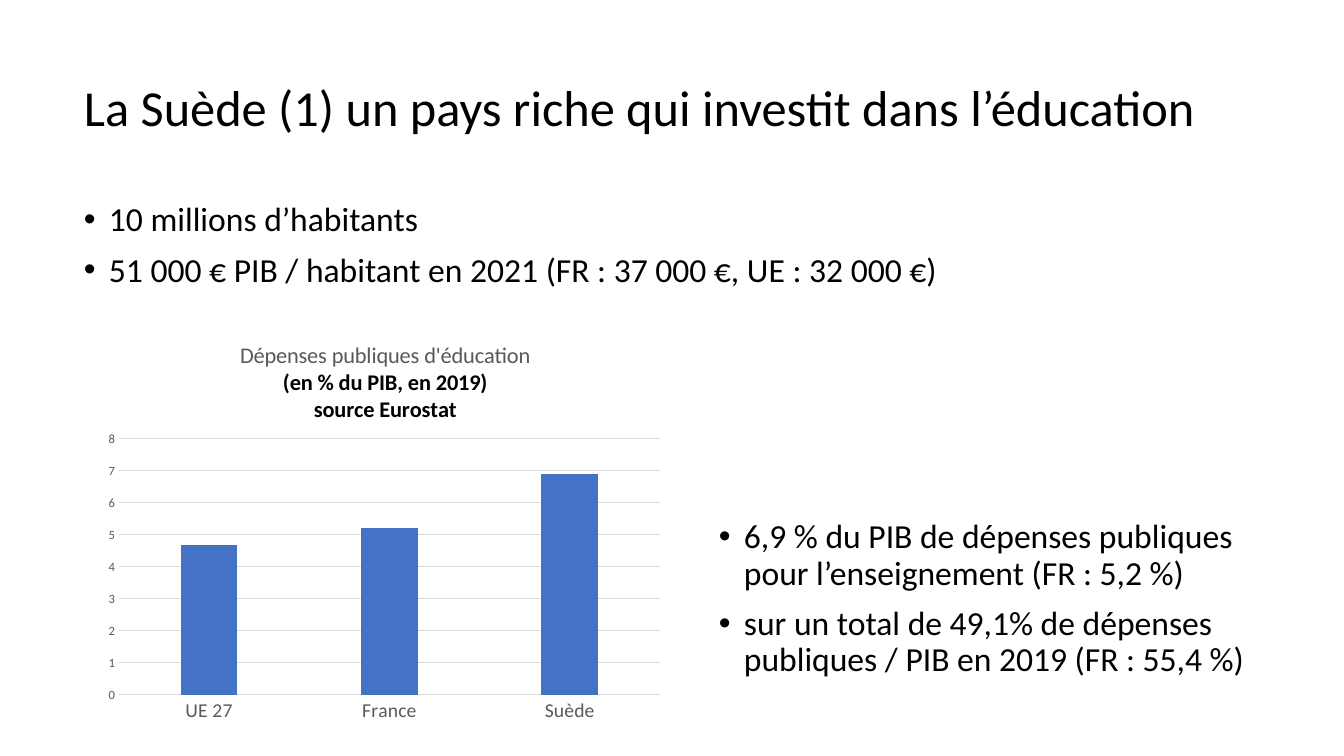
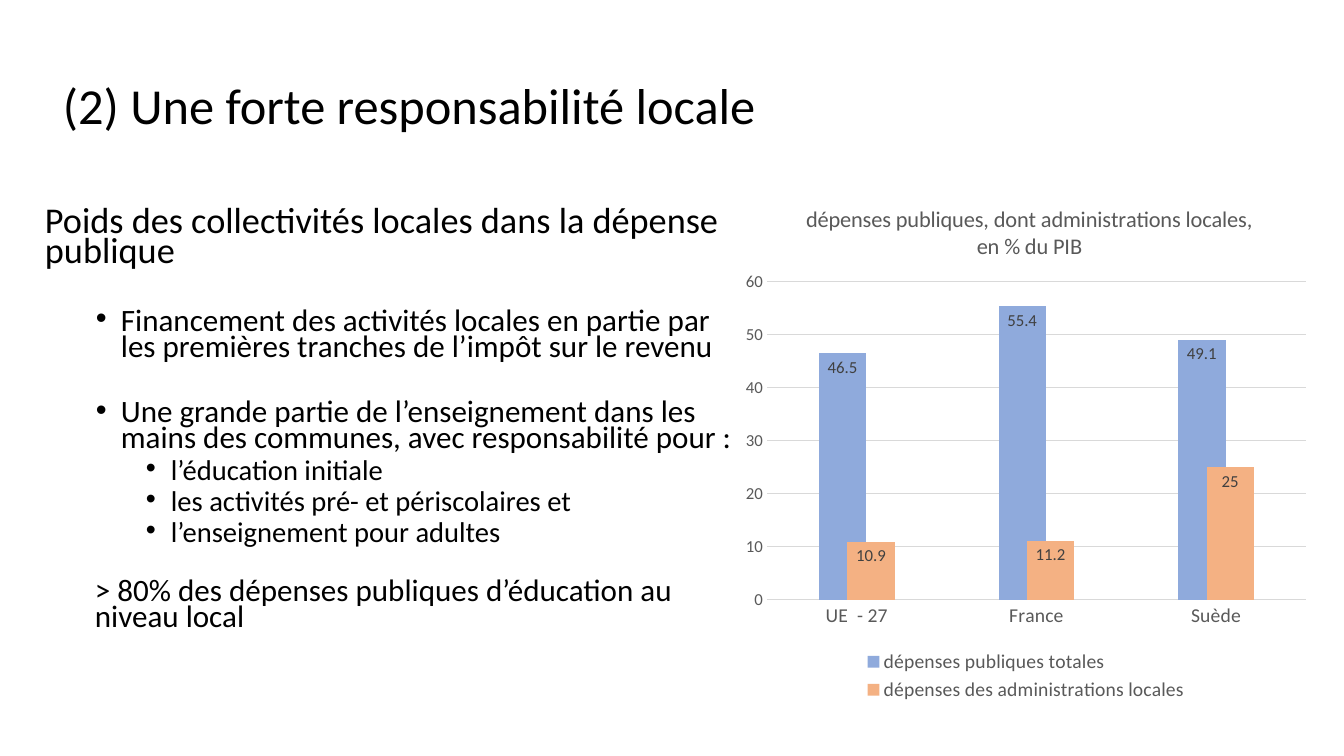
"""Two slides on public education spending in Sweden."""
from lxml import etree
from pptx import Presentation
from pptx import util as u
from pptx.chart.data import CategoryChartData
from pptx.dml.color import RGBColor
from pptx.enum import chart as kind, text
from pptx.oxml.ns import qn

PX = 914400 / 100.8
FONT = "Calibri"
BLACK = RGBColor(0, 0, 0)
GREY = RGBColor(0x59, 0x59, 0x59)
DARK = RGBColor(0x40, 0x40, 0x40)
PALE = RGBColor(0xD9, 0xD9, 0xD9)
BLUE = RGBColor(0x44, 0x72, 0xC4)
SKY = RGBColor(0x8F, 0xAA, 0xDC)
PEACH = RGBColor(0xF4, 0xB1, 0x83)


def write(frame, words, size=24, color=BLACK, bold=False, line=None, before=None,
          left=0, level=0, bullet=False):
    """Add one formatted paragraph to a text frame."""
    par = frame.add_paragraph() if frame.text else frame.paragraphs[0]
    run = par.add_run()
    run.text = words
    font = run.font
    font.name, font.size, font.bold = FONT, u.Pt(size), bold
    font.color.rgb = color
    par.level = level
    if line:
        par.line_spacing = line
    if before:
        par.space_before = u.Pt(before)
    props = par._p.get_or_add_pPr()
    if left:
        props.set("marL", str(round(left * PX)))
    if bullet:
        props.set("indent", str(round(-25 * PX)))
        etree.SubElement(props, qn("a:buFont")).set("typeface", "Arial")
        etree.SubElement(props, qn("a:buChar")).set("char", "•")


def place(part, index, **spots):
    """Fix the position of a chart part, as fractions of the chart."""
    for old in part.findall(qn("c:layout")):
        part.remove(old)
    outer = etree.Element(qn("c:layout"))
    part.insert(index, outer)
    inner = etree.SubElement(outer, qn("c:manualLayout"))
    if "w" in spots:
        etree.SubElement(inner, qn("c:layoutTarget")).set("val", "inner")
    for key in "xy":
        etree.SubElement(inner, qn(f"c:{key}Mode")).set("val", "edge")
    for key, spot in spots.items():
        etree.SubElement(inner, qn(f"c:{key}")).set("val", f"{spot:.4f}")


ITEM = dict(line=0.9, before=10, left=25, bullet=True)
HEAD = dict(size=25.9, line=0.7, before=10)
POINT = dict(size=22.2, line=0.7, left=76, level=1, bullet=True)
SUB = dict(size=20.4, line=0.7, before=5, left=126, level=2, bullet=True)
NOTE = dict(size=22.2, line=0.7, before=24, left=50, level=1)

PAGES = [
    dict(
        title="La Suède (1) un pays riche qui investit dans l’éducation",
        spot=(74, 37),
        bodies=[
            ((74, 198, 1234, 170), [
                ("10 millions d’habitants", ITEM),
                ("51 000 € PIB / habitant en 2021 (FR : 37 000 €, UE : 32 000 €)", ITEM),
            ]),
            ((709, 515, 598, 230), [
                ("6,9 % du PIB de dépenses publiques pour l’enseignement (FR : 5,2 %)", ITEM),
                ("sur un total de 49,1% de dépenses publiques / PIB en 2019 (FR : 55,4 %)", ITEM),
            ]),
        ],
        box=(98, 318, 575, 414),
        plot=(119, 439, 541, 256),
        head=(237, 337),
        lines=[
            ("Dépenses publiques d'éducation", dict(color=GREY)),
            ("(en % du PIB, en 2019)", dict(bold=True)),
            ("source Eurostat", dict(bold=True)),
        ],
        cats=["UE 27", "France", "Suède"],
        series=[("Series 1", (4.7, 5.2, 6.9), BLUE)],
        top=8, step=1, tick=9, overlap=-27, detail=False,
    ),
    dict(
        title="(2) Une forte responsabilité locale",
        spot=(53, 35),
        bodies=[
            ((35, 204, 717, 480), [
                ("Poids des collectivités locales dans la dépense publique", HEAD),
                ("Financement des activités locales en partie par les premières "
                 "tranches de l’impôt sur le revenu", dict(POINT, before=29)),
                ("Une grande partie de l’enseignement dans les mains des communes, "
                 "avec responsabilité pour :", dict(POINT, before=28)),
                ("l’éducation initiale", SUB),
                ("les activités pré- et périscolaires et", SUB),
                ("l’enseignement pour adultes", SUB),
                ("> 80% des dépenses publiques d’éducation au niveau local", NOTE),
            ]),
        ],
        box=(734, 181, 584, 525),
        plot=(767, 282, 539, 318),
        head=(803, 201),
        lines=[
            ("dépenses publiques, dont administrations locales,", dict(color=GREY)),
            ("en % du PIB", dict(color=GREY)),
        ],
        cats=["UE  - 27", "France", "Suède"],
        series=[
            ("dépenses publiques totales", (46.5, 55.4, 49.1), SKY),
            ("dépenses des administrations locales", (10.9, 11.2, 25), PEACH),
        ],
        top=60, step=10, tick=12, overlap=40, detail=True,
    ),
]

deck = Presentation()
deck.slide_width, deck.slide_height = round(1344 * PX), round(756 * PX)

for page in PAGES:
    slide = deck.slides.add_slide(deck.slide_layouts[6])
    title = ((*page["spot"], 1159, 146), [(page["title"], dict(size=36, line=0.9))])
    for box, paras in [title, *page["bodies"]]:
        frame = slide.shapes.add_textbox(*(round(n * PX) for n in box)).text_frame
        frame.word_wrap = True
        if paras is title[1]:
            frame.vertical_anchor = text.MSO_ANCHOR.MIDDLE
        for words, style in paras:
            write(frame, words, **style)

    data = CategoryChartData()
    data.categories = page["cats"]
    for name, vals, _ in page["series"]:
        data.add_series(name, vals)
    box = page["box"]
    chart = slide.shapes.add_chart(
        kind.XL_CHART_TYPE.COLUMN_CLUSTERED, *(round(n * PX) for n in box), data).chart
    chart.font.name, chart.font.size = FONT, u.Pt(10)
    chart.font.color.rgb = BLACK

    chart.has_title = True
    frame = chart.chart_title.text_frame
    for words, style in page["lines"]:
        write(frame, words, size=16, **style)
    x, y, w, h = box
    left, top = page["head"]
    place(chart.chart_title._element, 1, x=(left - x) / w, y=(top - y) / h)
    left, top, wide, high = page["plot"]
    place(chart._chartSpace.chart.plotArea, 0,
          x=(left - x) / w, y=(top - y) / h, w=wide / w, h=high / h)

    plot = chart.plots[0]
    plot.vary_by_categories = False
    plot.gap_width, plot.overlap = 219, page["overlap"]
    for bars, (_, _, color) in zip(plot.series, page["series"]):
        bars.format.fill.solid()
        bars.format.fill.fore_color.rgb = color
        bars.invert_if_negative = False

    cat, val = chart.category_axis, chart.value_axis
    fonts = [(cat.tick_labels.font, 14, GREY), (val.tick_labels.font, page["tick"], GREY)]
    for axis in (cat, val):
        axis.major_tick_mark = axis.minor_tick_mark = kind.XL_TICK_MARK.NONE
    val.minimum_scale, val.maximum_scale = 0, page["top"]
    val.major_unit = page["step"]
    val.has_major_gridlines = True
    val.format.line.fill.background()
    for rule in (cat.format.line, val.major_gridlines.format.line):
        rule.color.rgb, rule.width = PALE, u.Pt(0.75)

    chart.has_legend = page["detail"]
    if page["detail"]:
        chart.legend.position = kind.XL_LEGEND_POSITION.BOTTOM
        chart.legend.include_in_layout = False
        fonts.append((chart.legend.font, 14, GREY))
        for bars in plot.series:
            tags = bars.data_labels
            tags.show_value = True
            tags.position = kind.XL_LABEL_POSITION.INSIDE_END
            fonts.append((tags.font, 12, DARK))
    for font, size, color in fonts:
        font.name, font.size = FONT, u.Pt(size)
        font.color.rgb = color

deck.save("out.pptx")
